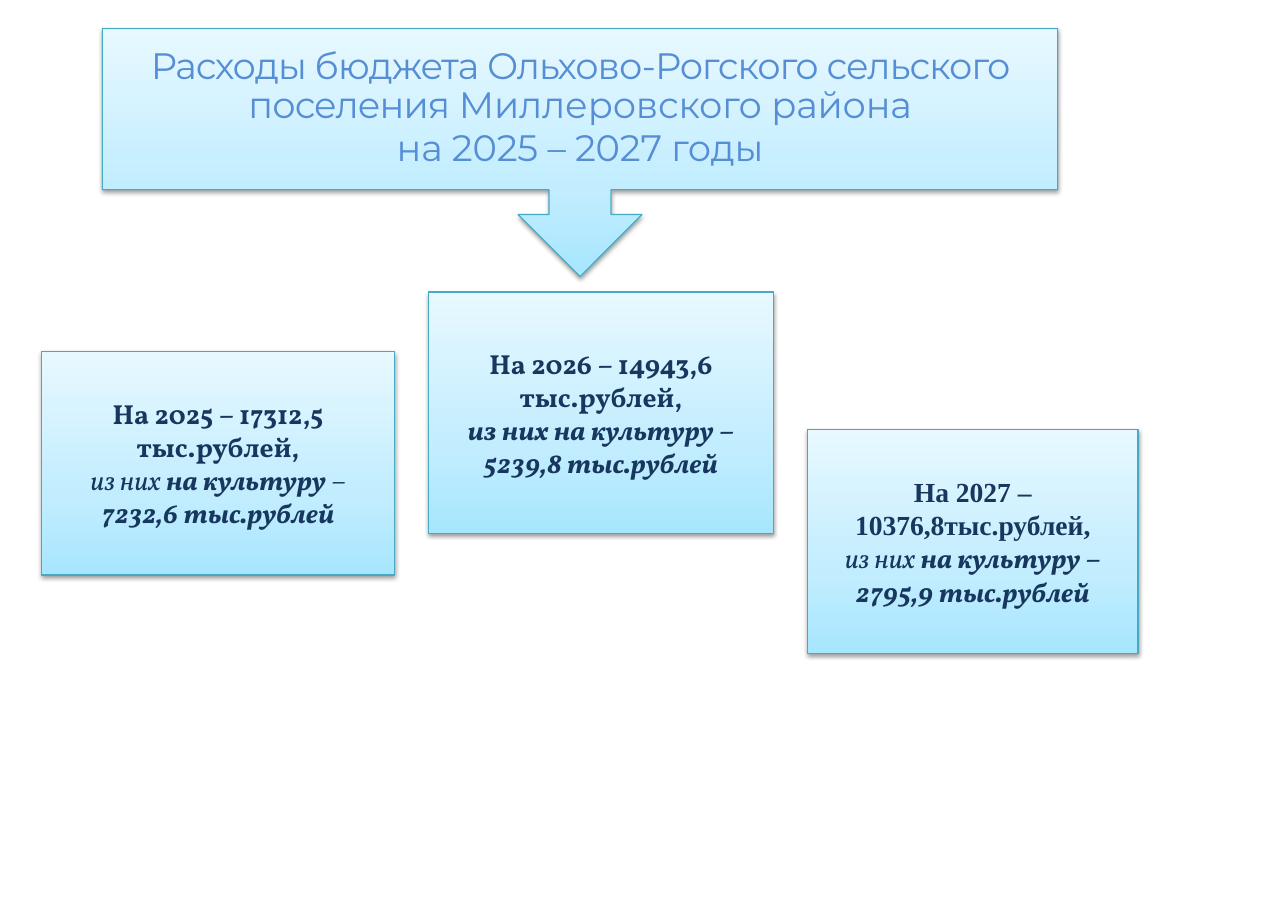
from lxml import etree
from pptx import Presentation
from pptx.dml.color import RGBColor
from pptx.enum.shapes import MSO_SHAPE
from pptx.enum.text import MSO_ANCHOR, MSO_AUTO_SIZE, PP_ALIGN
from pptx.oxml import parse_xml
from pptx.util import Pt

PX = 9144  # 100 px to the inch
RECT = MSO_SHAPE.RECTANGLE
ARROW = MSO_SHAPE.DOWN_ARROW_CALLOUT
MIDDLE = MSO_ANCHOR.MIDDLE
NO_FIT = MSO_AUTO_SIZE.NONE
CENTER = PP_ALIGN.CENTER

NS = "http://schemas.openxmlformats.org/drawingml/2006/main"
EDGE, NAVY, BLUE = "46AAC5", "17375E", "558ED5"
STOPS = [(0, "A7E6FF"), (35, "C1EDFF"), (100, "E7F8FF")]
SERIF, ROMAN, SANS = "Vollkorn", "Times New Roman", "Montserrat"
BOLD = {"bold": True}
ITALIC = {"italic": True}
BOTH = {"bold": True, "italic": True}

# Left, top, width, height, then paragraphs of (text, format) runs
YEARS = [
    ((38, 319, 320, 203), [
        [("На 2025 – 17312,5 тыс.рублей,", BOLD)],
        [("из них ", ITALIC), ("на культуру ", BOTH), ("–", ITALIC)],
        [("7232,6 тыс.рублей", BOTH)]]),
    ((389, 265, 313, 219), [
        [("На 2026 – 14943,6 тыс.рублей,", BOLD)],
        [("из них на культуру – 5239,8 тыс.рублей", BOTH)]]),
    ((733, 390, 300, 203), [
        [("На 2027 – 10376,8тыс.рублей,", {"bold": True, "face": ROMAN})],
        [("из них ", ITALIC),
         ("на культуру – 2795,9 тыс.рублей", BOTH)]]),
]
TITLE = [
    [("Расходы бюджета Ольхово-Рогского сельского поселения ",
      {"track": -60}),
     ("Миллеровского района", {"track": -10})],
    [("на 2025 – 2027 годы", {"track": -10})],
]


def rgb(code):
    return RGBColor.from_string(code)


def shade(shape):
    """Fill with the pale blue gradient, darkest at the foot."""
    shape.fill.gradient()
    shape.fill.gradient_angle = 90
    stops = shape._element.spPr.find(f".//{{{NS}}}gsLst")
    for stop in list(stops):
        stops.remove(stop)
    for pos, code in STOPS:
        stop = etree.SubElement(stops, f"{{{NS}}}gs", pos=str(pos * 1000))
        etree.SubElement(stop, f"{{{NS}}}srgbClr", val=code)


def drop(shape):
    """Cast a soft shadow straight down."""
    shape.shadow.inherit = False
    effects = shape._element.spPr.find(f"{{{NS}}}effectLst")
    effects.append(parse_xml(
        f'<a:outerShdw xmlns:a="{NS}" blurRad="{Pt(3.1)}" dist="{Pt(1.6)}" '
        'dir="5400000" rotWithShape="0"><a:srgbClr val="000000">'
        '<a:alpha val="38000"/></a:srgbClr></a:outerShdw>'))


def panel(slide, kind, place):
    shape = slide.shapes.add_shape(kind, *[n * PX for n in place])
    shade(shape)
    shape.line.color.rgb = rgb(EDGE)
    shape.line.width = Pt(0.75)
    drop(shape)
    return shape


def write(para, text, size=18, face=SERIF, color=NAVY, bold=False,
          italic=False, track=0):
    run = para.add_run()
    run.text = text
    font = run.font
    font.size, font.name = Pt(size), face
    font.bold, font.italic = bold, italic
    font.color.rgb = rgb(color)
    if track:
        run._r.get_or_add_rPr().set("spc", str(track))


def fill_text(shape, paras, **base):
    frame = shape.text_frame
    frame.word_wrap = True
    frame.auto_size = NO_FIT
    frame.vertical_anchor = MIDDLE
    for i, runs in enumerate(paras):
        para = frame.add_paragraph() if i else frame.paragraphs[0]
        para.alignment = CENTER
        for text, style in runs:
            write(para, text, **{**base, **style})


def head(slide):
    # Callout goes behind the title text
    box = panel(slide, ARROW, (93, 26, 867, 225))
    title = slide.shapes.title
    title._element.addprevious(box._element)
    title.left, title.top, title.width, title.height = (
        n * PX for n in (93, 26, 867, 146))
    fill_text(title, TITLE, size=24, face=SANS, color=BLUE)
    for para in title.text_frame.paragraphs:
        para.line_spacing = Pt(25)
        para.space_before = Pt(3.5)


def main():
    deck = Presentation()
    deck.slide_width, deck.slide_height = 1169 * PX, 826 * PX
    slide = deck.slides.add_slide(deck.slide_layouts[5])
    head(slide)
    # One box for each year
    for place, paras in YEARS:
        fill_text(panel(slide, RECT, place), paras)
    deck.save("out.pptx")


if __name__ == "__main__":
    main()
